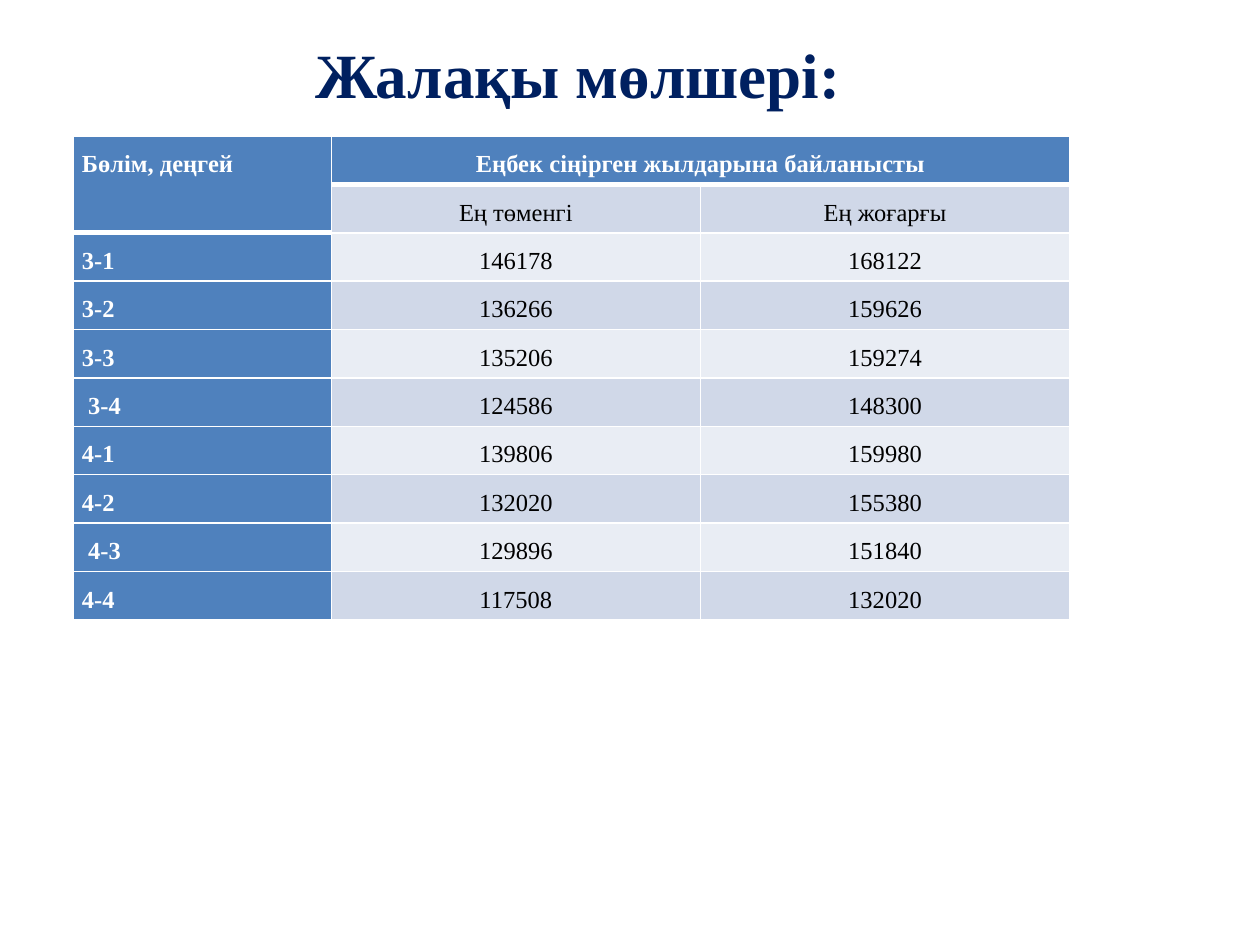
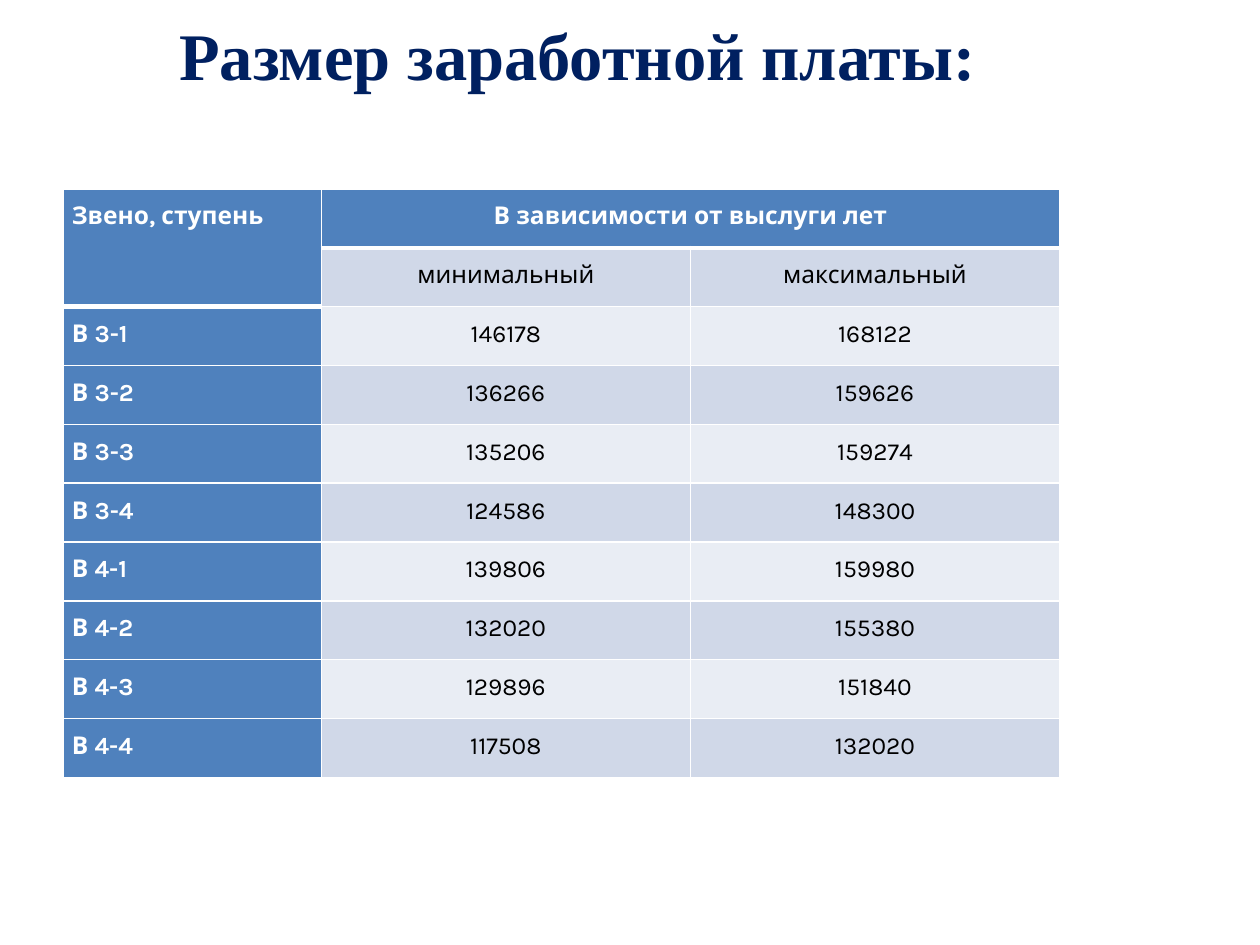
from lxml.etree import SubElement
from pptx import Presentation
from pptx.dml.color import RGBColor
from pptx.enum.text import MSO_ANCHOR, MSO_AUTO_SIZE, PP_ALIGN
from pptx.oxml.ns import qn
from pptx.util import Inches, Pt

COLORS = {"title": "002060", "head": "4F81BD", "dark_band": "D0D8E8",
          "light_band": "E9EDF4", "white": "FFFFFF", "black": "000000"}
TITLE_FONT = "Times New Roman"
COLUMN_WIDTHS = (2.05, 2.93, 2.93)
HEADER_ROWS = 2
SIDE_INSET = 0.07
NUDGE = 0.05

SALARIES = [
    ("3-1", 146178, 168122),
    ("3-2", 136266, 159626),
    ("3-3", 135206, 159274),
    ("3-4", 124586, 148300),
    ("4-1", 139806, 159980),
    ("4-2", 132020, 155380),
    ("4-3", 129896, 151840),
    ("4-4", 117508, 132020),
]

SLIDES = [
    dict(title="Жалақы мөлшері:", title_top=0.23, title_size=36,
         heads=("Бөлім, деңгей", "Еңбек сіңірген жылдарына байланысты"),
         subheads=("Ең төменгі", "Ең жоғарғы"), prefix="",
         nudged=("3-4", "4-3"), font="Times New Roman",
         left=0.58, top=1.08, row_height=0.384),
    dict(title="Размер заработной платы:", title_top=0.06, title_size=38,
         heads=("Звено, ступень", "В зависимости от выслуги лет"),
         subheads=("минимальный", "максимальный"), prefix="В ",
         nudged=(), font="Karla",
         left=0.5, top=1.5, row_height=0.467),
]


def set_font(font, color, **values):
    for name, value in values.items():
        setattr(font, name, value)
    font.color.rgb = RGBColor.from_string(COLORS[color])


def add_title(s, text, top, size):
    sp = s.shapes.title
    sp.left, sp.top, sp.width, sp.height = map(Inches, (0.25, top, 8.67, 0.75))
    tf = sp.text_frame
    tf.text = text
    tf.auto_size = MSO_AUTO_SIZE.NONE
    tf.vertical_anchor = MSO_ANCHOR.TOP
    p = tf.paragraphs[0]
    p.alignment = PP_ALIGN.CENTER
    set_font(p.runs[0].font, "title", name=TITLE_FONT, size=Pt(size), bold=True)


def set_borders(cell, bottom):
    """Draw white cell borders, 1 pt except for the bottom one."""
    tc_pr = cell._tc.get_or_add_tcPr()
    for side, width in dict(L=1, R=1, T=1, B=bottom).items():
        ln = SubElement(tc_pr, qn(f"a:ln{side}"), w=str(Pt(width)))
        fill = SubElement(ln, qn("a:solidFill"))
        SubElement(fill, qn("a:srgbClr"), val=COLORS["white"])


def style_cell(cell, fill, bottom=1):
    set_borders(cell, bottom)
    cell.fill.solid()
    cell.fill.fore_color.rgb = RGBColor.from_string(COLORS[fill])


def write_cell(cell, text, font, header, centred, nudge=0):
    cell.margin_left = Inches(SIDE_INSET + nudge)
    cell.margin_right = Inches(SIDE_INSET)
    cell.margin_top, cell.margin_bottom = Pt(12), 0
    p = cell.text_frame.paragraphs[0]
    p.alignment = PP_ALIGN.CENTER if centred else PP_ALIGN.LEFT
    p.line_spacing = Pt(12)
    r = p.add_run()
    r.text = text
    set_font(r.font, "white" if header else "black",
             name=font, size=Pt(14), bold=header)


def add_salary_table(s, heads, subheads, prefix, nudged, font,
                     left, top, row_height):
    rows = [(heads[0], heads[1], None), (None, *subheads)]
    rows += [(prefix + grade, str(low), str(high))
             for grade, low, high in SALARIES]
    table = s.shapes.add_table(
        len(rows), len(COLUMN_WIDTHS), Inches(left), Inches(top),
        Inches(sum(COLUMN_WIDTHS)), Inches(row_height * len(rows))).table
    table.first_row = table.horz_banding = False
    for column, width in zip(table.columns, COLUMN_WIDTHS):
        column.width = Inches(width)
    table.cell(0, 0).merge(table.cell(1, 0))
    table.cell(0, 1).merge(table.cell(0, 2))

    for i, row in enumerate(rows):
        table.rows[i].height = Inches(row_height)
        band = "light_band" if i % 2 == 0 else "dark_band"
        for j, text in enumerate(row):
            cell = table.cell(i, j)
            header = i == 0 or j == 0
            under_head = i == 0 or (j == 0 and i < HEADER_ROWS)
            style_cell(cell, "head" if header else band, 3 if under_head else 1)
            if text is not None:
                write_cell(cell, text, font, header, j > 0,
                           NUDGE if text in nudged else 0)


def main():
    prs = Presentation()
    prs.slide_width, prs.slide_height = Inches(10), Inches(7.5)
    title_only = prs.slide_layouts[5]
    for content in SLIDES:
        s = prs.slides.add_slide(title_only)
        table = dict(content)
        add_title(s, table.pop("title"), table.pop("title_top"),
                  table.pop("title_size"))
        add_salary_table(s, **table)
    prs.save("out.pptx")


if __name__ == "__main__":
    main()
